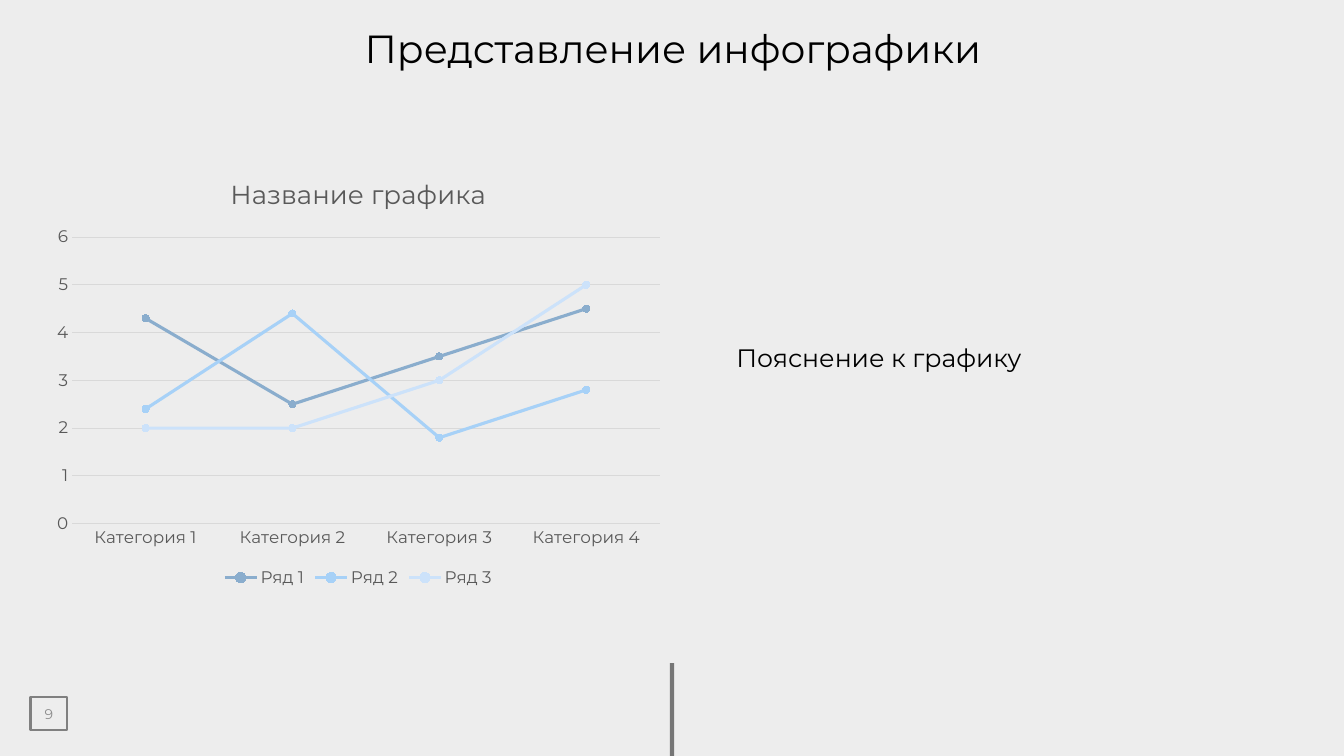
import pptx
import pptx.chart.data
import pptx.dml.color
import pptx.enum.chart
import pptx.enum.shapes
import pptx.enum.text
import pptx.oxml
import pptx.util
from lxml import etree
from pptx.util import Cm, Pt

RGBColor = pptx.dml.color.RGBColor
Align = pptx.enum.text.PP_ALIGN
Anchor = pptx.enum.text.MSO_ANCHOR

TITLE = "Представление инфографики"
EXPLANATION = "Пояснение к графику"
PAGE_NUMBER = "9"
CHART_TITLE = "Название графика"
CATEGORIES = [f"Категория {number}" for number in range(1, 5)]
SERIES = [
    ("Ряд 1", (4.3, 2.5, 3.5, 4.5), RGBColor(0x8A, 0xAD, 0xCD)),
    ("Ряд 2", (2.4, 4.4, 1.8, 2.8), RGBColor(0xA7, 0xD1, 0xF7)),
    ("Ряд 3", (2, 2, 3, 5), RGBColor(0xCC, 0xE2, 0xFA)),
]

FONT = "Montserrat"
BLACK = RGBColor(0, 0, 0)
BACKGROUND = RGBColor(0xED, 0xED, 0xED)
FRAME_GREY = RGBColor(0x80, 0x80, 0x80)
NUMBER_GREY = RGBColor(0x8C, 0x8C, 0x8C)
CHART_TEXT = RGBColor(0x59, 0x59, 0x59)
GRID_GREY = RGBColor(0xD9, 0xD9, 0xD9)

SLIDE_WIDTH, SLIDE_HEIGHT = Cm(33.87), Cm(19.05)


def style_font(font, size, color):
    font.name = FONT
    font.size = Pt(size)
    font.bold = False
    font.color.rgb = color


def write(box, text, size, color, align=Align.LEFT, anchor=Anchor.TOP, spacing=1.0):
    frame = box.text_frame
    frame.word_wrap = True
    frame.vertical_anchor = anchor
    para = frame.paragraphs[0]
    para.alignment = align
    para.line_spacing = spacing
    span = para.add_run()
    span.text = text
    style_font(span.font, size, color)


def style_line(line, color, width):
    line.color.rgb = color
    line.width = Pt(width)


def add_divider(page):
    center = SLIDE_WIDTH // 2
    divider = page.shapes.add_connector(
        pptx.enum.shapes.MSO_CONNECTOR.STRAIGHT, center, Cm(16.71), center, SLIDE_HEIGHT)
    style_line(divider.line, BLACK, 3)
    properties = divider._element.spPr
    color = properties.find(".//" + pptx.oxml.ns.qn("a:srgbClr"))
    etree.SubElement(color, pptx.oxml.ns.qn("a:alpha"), val="50000")
    etree.SubElement(properties, pptx.oxml.ns.qn("a:effectLst"))


def add_page_number(page):
    frame = page.shapes.add_shape(
        pptx.enum.shapes.MSO_SHAPE.RECTANGLE, Cm(0.77), Cm(17.56), Cm(0.92), Cm(0.84))
    frame.shadow.inherit = False
    frame.fill.background()
    style_line(frame.line, FRAME_GREY, 1.5)
    text = frame.text_frame
    text.margin_left = text.margin_right = text.margin_top = text.margin_bottom = 0
    write(frame, PAGE_NUMBER, 10, NUMBER_GREY, Align.CENTER, Anchor.MIDDLE)


def style_axis(axis):
    axis.major_tick_mark = axis.minor_tick_mark = pptx.enum.chart.XL_TICK_MARK.NONE
    style_font(axis.tick_labels.font, 12, CHART_TEXT)


def add_line_chart(page):
    data = pptx.chart.data.CategoryChartData()
    data.categories = CATEGORIES
    for name, values, _ in SERIES:
        data.add_series(name, values)
    chart = page.shapes.add_chart(
        pptx.enum.chart.XL_CHART_TYPE.LINE_MARKERS,
        Cm(1.12), Cm(3.96), Cm(15.82), Cm(10.95), data).chart
    style_font(chart.font, 10, BLACK)

    chart.has_title = True
    chart.chart_title.include_in_layout = False
    span = chart.chart_title.text_frame.paragraphs[0].add_run()
    span.text = CHART_TITLE
    style_font(span.font, 18.6, CHART_TEXT)

    chart.has_legend = True
    chart.legend.position = pptx.enum.chart.XL_LEGEND_POSITION.BOTTOM
    chart.legend.include_in_layout = False
    style_font(chart.legend.font, 12, CHART_TEXT)

    style_axis(chart.category_axis)
    style_line(chart.category_axis.format.line, GRID_GREY, 0.75)
    value_axis = chart.value_axis
    style_axis(value_axis)
    value_axis.minimum_scale, value_axis.maximum_scale, value_axis.major_unit = 0, 6, 1
    value_axis.format.line.fill.background()
    value_axis.has_major_gridlines = True
    style_line(value_axis.major_gridlines.format.line, GRID_GREY, 0.75)

    plot = chart.plots[0]
    plot.vary_by_categories = False
    for series, (_, _, color) in zip(plot.series, SERIES):
        series.smooth = False
        style_line(series.format.line, color, 2.25)
        series.marker.style = pptx.enum.chart.XL_MARKER_STYLE.CIRCLE
        series.marker.size = 5
        series.marker.format.fill.solid()
        series.marker.format.fill.fore_color.rgb = color
        style_line(series.marker.format.line, color, 0.75)


def main():
    deck = pptx.Presentation()
    deck.slide_width, deck.slide_height = SLIDE_WIDTH, SLIDE_HEIGHT
    page = deck.slides.add_slide(deck.slide_layouts[6])
    page.background.fill.solid()
    page.background.fill.fore_color.rgb = BACKGROUND

    add_divider(page)
    add_page_number(page)
    title = page.shapes.add_textbox(Cm(8.94), Cm(0.61), Cm(17.83), Cm(1.27))
    write(title, TITLE, 28, BLACK, spacing=0.9)
    explanation = page.shapes.add_textbox(Cm(18.31), Cm(2.82), Cm(14.78), Cm(12.09))
    write(explanation, EXPLANATION, 18, BLACK, anchor=Anchor.MIDDLE, spacing=1.4)
    add_line_chart(page)
    deck.save("out.pptx")


if __name__ == "__main__":
    main()
